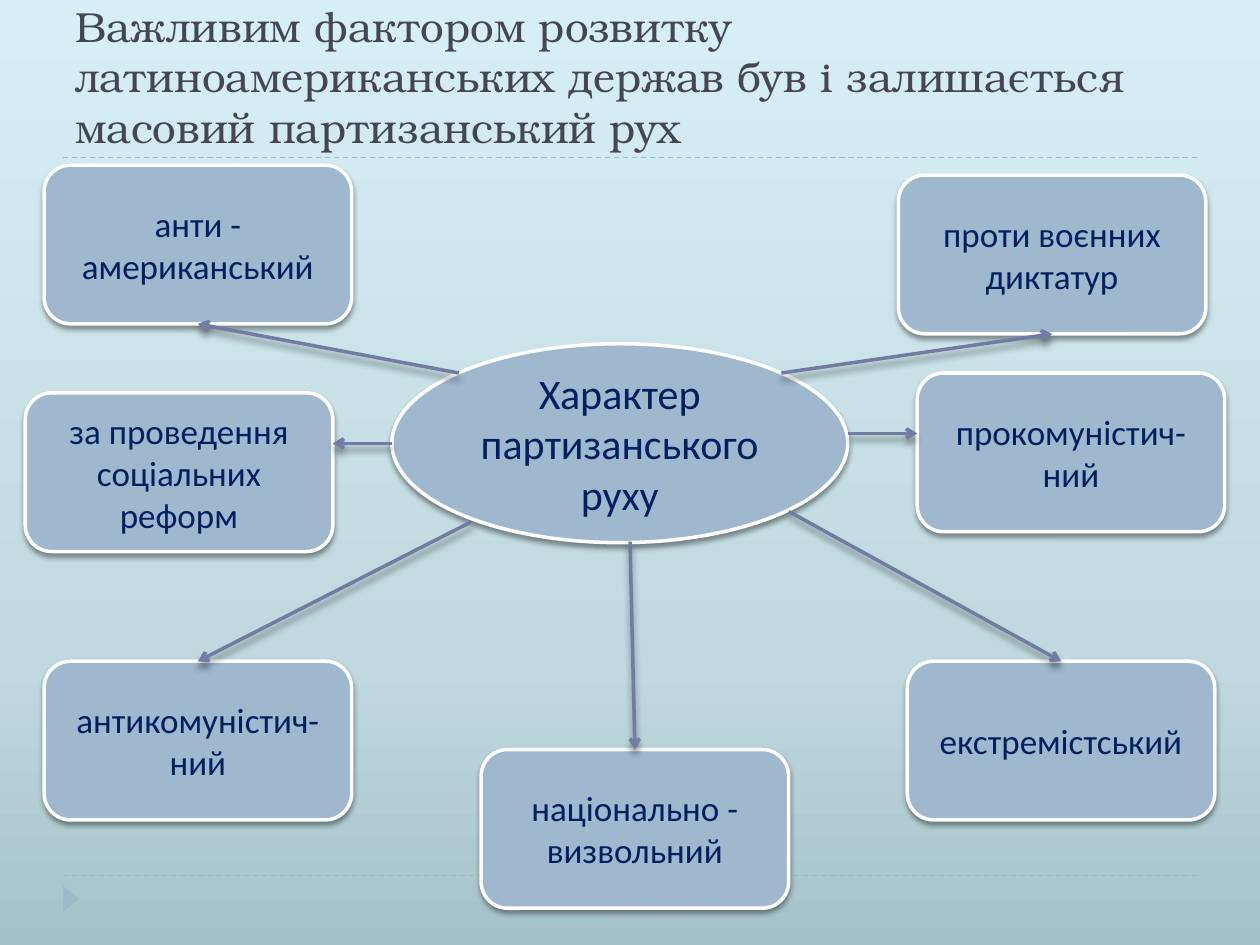
"""Builds a slide on the character of the Latin American guerrilla movement."""
from copy import deepcopy

from lxml.etree import SubElement
from pptx import Presentation
from pptx.dml.color import RGBColor
from pptx.enum.dml import MSO_LINE
from pptx.enum.shapes import MSO_CONNECTOR as Link, MSO_SHAPE as Form
from pptx.enum.text import MSO_ANCHOR as Anchor, PP_ALIGN as Align
from pptx.oxml.ns import qn
from pptx.util import Cm, Pt

PALE_BLUE, VIOLET, NAVY, WHITE = "9FB8CD", "727CA3", "002060", "FFFFFF"
TITLE = ("Важливим фактором розвитку латиноамериканських держав був "
         "і залишається масовий партизанський рух")
TOP, BOTTOM = 0, 2
BOX_SIZE = (6.2, 3.2)
TRAITS = {
    "анти - американський": (0.89, 3.33),
    "проти воєнних диктатур": (18.11, 3.53),
    "за проведення соціальних реформ": (0.51, 7.92),
    "екстремістський": (18.29, 13.33),
    "антикомуністич-ний": (0.89, 13.33),
    "національно - визвольний": (9.7, 15.11),
    "прокомуністич-ний": (18.49, 7.52),
}
JOINED_ARROWS = [
    ((15.75, 7.52), "проти воєнних диктатур", BOTTOM),
    ((9.5, 10.52), "антикомуністич-ний", TOP),
    ((15.9, 10.31), "екстремістський", TOP),
    ((12.7, 10.92), "національно - визвольний", TOP),
    ((9.25, 7.52), "анти - американський", BOTTOM),
]
SIDE_ARROWS = [((17.09, 8.74), (18.49, 8.74)), ((7.9, 8.94), (6.71, 8.94))]


def color(value):
    """Return the colour for a hex string."""
    return RGBColor.from_string(value)


def paint_background(slide):
    """Fill the background with a gradient that gets lighter upwards."""
    fill = slide.background.fill
    fill.gradient()
    fill.gradient_angle = 90
    stops = slide.element.find(".//" + qn("a:gsLst"))
    stops.append(deepcopy(stops[-1]))
    shades = [(0, "A5C2C9"), (0.3, "C0D9DF"), (1, "D5EFF5")]
    for stop, (position, shade) in zip(fill.gradient_stops, shades):
        stop.position = position
        stop.color.rgb = color(shade)


def cast_shadow(effects, blur, distance):
    """Put a soft downward shadow into an effect list."""
    shadow = SubElement(effects, qn("a:outerShdw"), blurRad=str(Pt(blur)),
                        dist=str(Pt(distance)), dir="5400000", rotWithShape="0")
    black = SubElement(shadow, qn("a:srgbClr"), val="000000")
    SubElement(black, qn("a:alpha"), val="40000")


def write(shape, wording, size, font, ink, anchor, align):
    """Write one wrapped paragraph into a shape."""
    frame = shape.text_frame
    frame.word_wrap = True
    frame.vertical_anchor = anchor
    paragraph = frame.paragraphs[0]
    paragraph.alignment = align
    run = paragraph.add_run()
    run.text = wording
    run.font.size = Pt(size)
    run.font.name = font
    run.font.color.rgb = color(ink)


def add_bubble(slide, form, place, wording, size):
    """Add a white-edged shape with a shadow and centred text."""
    bubble = slide.shapes.add_shape(form, *map(Cm, place))
    bubble.fill.solid()
    bubble.fill.fore_color.rgb = color(PALE_BLUE)
    bubble.line.color.rgb = color(WHITE)
    bubble.line.width = Pt(2)
    bubble.shadow.inherit = False
    cast_shadow(bubble.element.spPr.find(qn("a:effectLst")), 3, 2)
    write(bubble, wording, size, "Calibri", NAVY, Anchor.MIDDLE, Align.CENTER)
    return bubble


def add_line(slide, start, end, ink, width):
    """Add a straight line and return it with its empty effect list."""
    line = slide.shapes.add_connector(Link.STRAIGHT, *map(Cm, start + end))
    line.line.color.rgb = color(ink)
    line.line.width = Pt(width)
    return line, SubElement(line.element.spPr, qn("a:effectLst"))


def add_arrow(slide, start, end):
    """Add a shadowed arrow."""
    arrow, effects = add_line(slide, start, end, VIOLET, 2)
    SubElement(arrow.line._get_or_add_ln(), qn("a:tailEnd"), type="arrow")
    cast_shadow(effects, 4, 3.4)
    return arrow


def add_decor(slide):
    """Add the dashed rules and the corner triangle."""
    for height in (17.65, 3.18):
        rule, _ = add_line(slide, (1.27, height), (24.13, height), PALE_BLUE, 0.75)
        rule.line.dash_style = MSO_LINE.DASH
    marker = slide.shapes.add_shape(
        Form.ISOSCELES_TRIANGLE, Cm(1.17), Cm(17.96), Cm(0.53), Cm(0.33))
    marker.rotation = 90
    marker.fill.solid()
    marker.fill.fore_color.rgb = color(PALE_BLUE)
    marker.line.fill.background()
    marker.shadow.inherit = False


def main():
    """Build and save the slide."""
    deck = Presentation()
    deck.slide_width, deck.slide_height = Cm(25.4), Cm(19.05)
    slide = deck.slides.add_slide(deck.slide_layouts[6])
    paint_background(slide)
    add_decor(slide)
    title = slide.shapes.add_textbox(Cm(1.27), Cm(0.64), Cm(22.86), Cm(2.54))
    write(title, TITLE, 24, "TeX Gyre Bonum", "464653", Anchor.BOTTOM, Align.LEFT)
    add_bubble(slide, Form.OVAL, (7.9, 6.93, 9.19, 4.01),
               "Характер партизанського руху", 24)
    boxes = {trait: add_bubble(slide, Form.ROUNDED_RECTANGLE, corner + BOX_SIZE, trait, 20)
             for trait, corner in TRAITS.items()}
    for start, trait, side in JOINED_ARROWS:
        add_arrow(slide, start, TRAITS[trait]).end_connect(boxes[trait], side)
    for start, end in SIDE_ARROWS:
        add_arrow(slide, start, end)
    deck.save("out.pptx")


if __name__ == "__main__":
    main()
